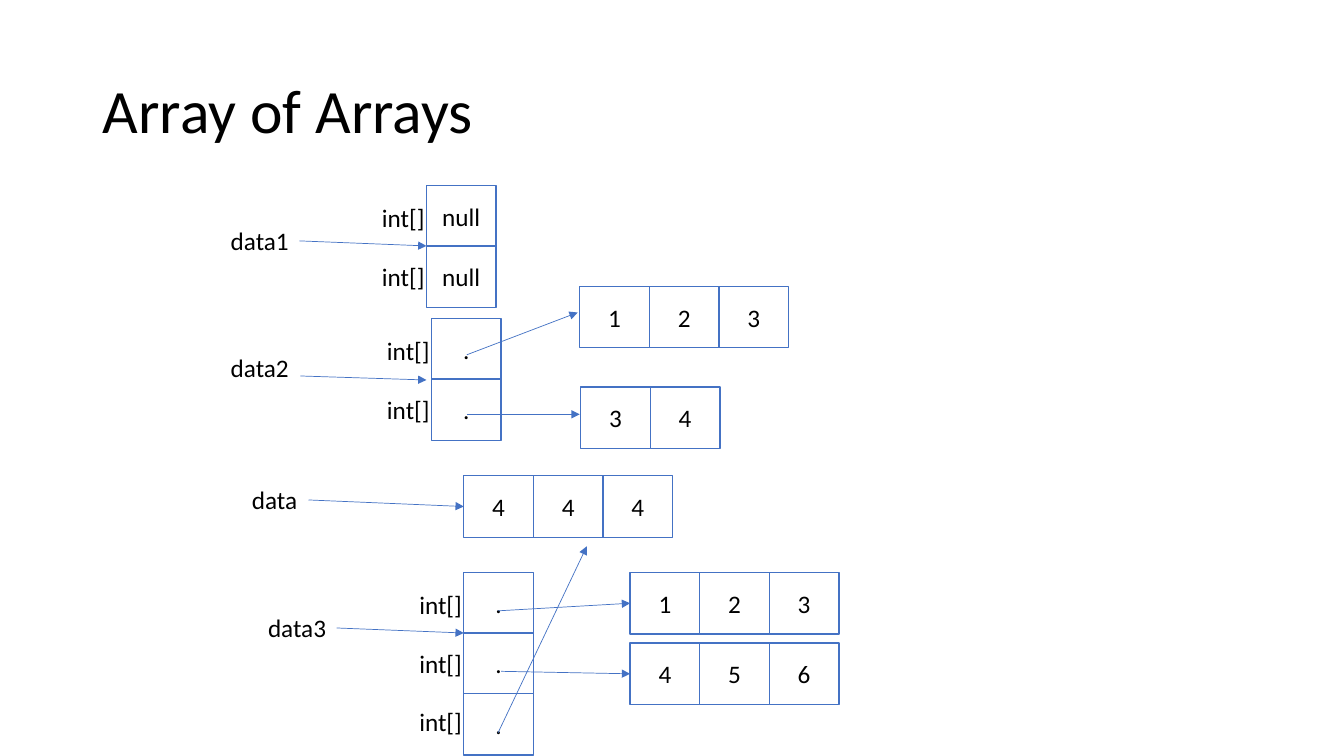
from lxml.etree import SubElement
from pptx import Presentation
from pptx.dml.color import RGBColor
from pptx.enum.shapes import MSO_CONNECTOR as Connector, MSO_SHAPE as Preset
from pptx.enum.text import MSO_ANCHOR as Anchor, MSO_AUTO_SIZE as AutoSize, PP_ALIGN as Align
from pptx.oxml.ns import qn
from pptx.util import Pt

PX = 9144  # 100 px to the inch
BLACK = RGBColor(0x00, 0x00, 0x00)
WHITE = RGBColor(0xFF, 0xFF, 0xFF)
BLUE = RGBColor(0x44, 0x72, 0xC4)
FONT = "Calibri"
CELL_WIDTH, CELL_HEIGHT = 69, 61
CELL_STEP = 60
LABEL_WIDTH, LABEL_HEIGHT, LABEL_STEP = 78, 40, 58


def emu(*lengths):
    return [length * PX for length in lengths]


def set_text(shape, text, size=18, align=Align.LEFT):
    frame = shape.text_frame
    frame.text = text
    paragraph = frame.paragraphs[0]
    paragraph.alignment = align
    font = paragraph.runs[0].font
    font.name, font.size = FONT, Pt(size)
    font.color.rgb = BLACK


def add_title(slide, text, left, top, width, height):
    title = slide.shapes.title
    title.left, title.top, title.width, title.height = emu(left, top, width, height)
    set_text(title, text, 44)
    title.text_frame.auto_size = AutoSize.NONE
    title.text_frame.vertical_anchor = Anchor.MIDDLE
    title.text_frame.paragraphs[0].line_spacing = 0.9


def add_label(shapes, text, left, top, width=LABEL_WIDTH, align=Align.LEFT, wrap=False):
    label = shapes.add_textbox(*emu(left, top, width, LABEL_HEIGHT))
    set_text(label, text, align=align)
    label.text_frame.word_wrap = wrap
    label.text_frame.auto_size = AutoSize.SHAPE_TO_FIT_TEXT
    return label


def add_cell(shapes, text, left, top):
    cell = shapes.add_shape(Preset.RECTANGLE, *emu(left, top, CELL_WIDTH, CELL_HEIGHT))
    cell.shadow.inherit = False
    cell.fill.solid()
    cell.fill.fore_color.rgb = WHITE
    cell.line.color.rgb = BLUE
    cell.line.width = Pt(1)
    set_text(cell, text, align=Align.CENTER)
    cell.text_frame.vertical_anchor = Anchor.MIDDLE
    return cell


def add_column(slide, values, left, top):
    """Stack the references of an outer array, each with its type on the left."""
    shapes = slide.shapes.add_group_shape().shapes
    for index, value in enumerate(values):
        add_cell(shapes, value, left, top + index * CELL_STEP)
    for index in range(len(values)):
        add_label(shapes, "int[]", left - 62, top + 12 + index * LABEL_STEP,
                  align=Align.CENTER, wrap=True)


def add_row(slide, values, left, top):
    """Lay out an inner array and return its first cell."""
    shapes = slide.shapes.add_group_shape().shapes
    cells = [add_cell(shapes, value, left + index * CELL_WIDTH, top)
             for index, value in enumerate(values)]
    return cells[0]


def add_arrow(slide, start, end, source=None, target=None):
    """Draw an arrow, joined to the right of source and the left of target."""
    arrow = slide.shapes.add_connector(Connector.STRAIGHT, *emu(*start, *end))
    if source is not None:
        arrow.begin_connect(source, 3)
    if target is not None:
        arrow.end_connect(target, 1)
    arrow.line.color.rgb = BLUE
    arrow.line.width = Pt(0.5)
    SubElement(arrow.line._get_or_add_ln(), qn("a:tailEnd"), type="triangle")
    SubElement(arrow._element.spPr, qn("a:effectLst"))


def add_null_array(slide, left, top):
    name = add_label(slide.shapes, "data1", left, top + 35)
    add_arrow(slide, (left + 78, top + 55), (left + 204, top + 60), source=name)
    add_column(slide, ["null", "null"], left + 204, top)


def add_ragged_array(slide, left, top):
    add_label(slide.shapes, "data2", left, top + 29)
    add_arrow(slide, (left + 79, top + 57), (left + 204, top + 61))
    add_column(slide, "..", left + 209, top)
    add_row(slide, "34", left + 357, top + 68)
    add_row(slide, "123", left + 356, top - 32)
    add_arrow(slide, (left + 244, top + 36), (left + 354, top - 6))
    add_arrow(slide, (left + 244, top + 95), (left + 356, top + 95))


def add_single_array(slide, left, top):
    row = add_row(slide, "444", left + 220, top)
    name = add_label(slide.shapes, "data", left, top + 4, width=66)
    add_arrow(slide, (left + 66, top + 24), (left + 220, top + 30), name, row)


def add_shared_array(slide, left, top):
    name = add_label(slide.shapes, "data3", left, top + 35)
    add_arrow(slide, (left + 78, top + 55), (left + 204, top + 60), source=name)
    add_column(slide, "...", left + 204, top)
    first = add_row(slide, "123", left + 369, top)
    add_arrow(slide, (left + 238, top + 38), (left + 369, top + 30), target=first)
    second = add_row(slide, "456", left + 369, top + 70)
    add_arrow(slide, (left + 241, top + 98), (left + 369, top + 101), target=second)
    add_arrow(slide, (left + 238, top + 159), (left + 326, top - 26))


def main():
    presentation = Presentation()
    presentation.slide_width, presentation.slide_height = emu(1333, 750)
    slide = presentation.slides.add_slide(presentation.slide_layouts[5])
    add_title(slide, "Array of Arrays", 92, 40, 1150, 145)
    add_null_array(slide, 219, 184)
    add_ragged_array(slide, 219, 316)
    add_single_array(slide, 240, 472)
    add_shared_array(slide, 256, 568)
    presentation.save("out.pptx")


if __name__ == "__main__":
    main()
